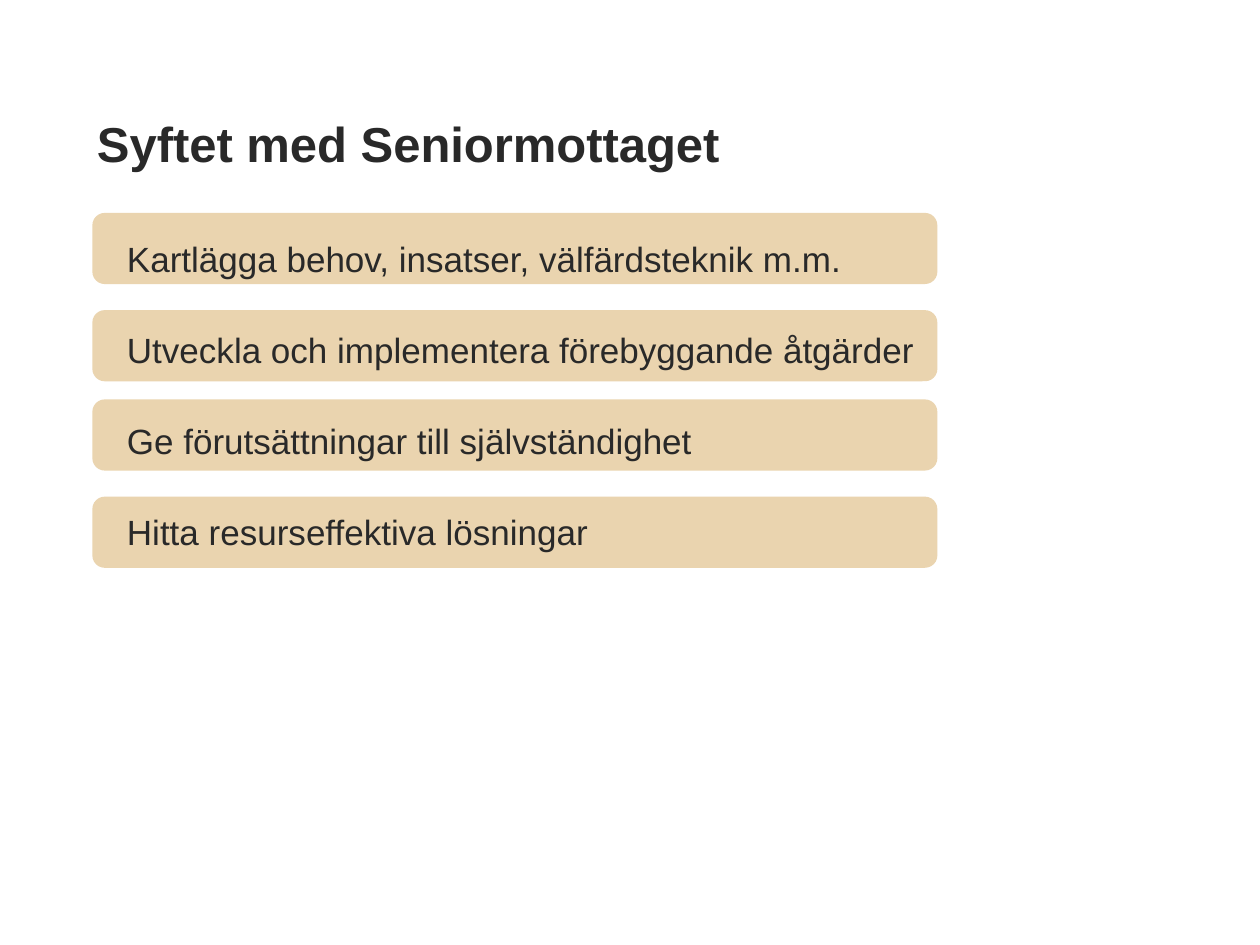
import dataclasses

import pptx
import pptx.dml.color
import pptx.enum.shapes
import pptx.enum.text
import pptx.util
from pptx.util import Cm


@dataclasses.dataclass(frozen=True)
class Theme:
    font: str = "Arial"
    ink: str = "292929"
    sand: str = "EAD4AF"
    title_size: int = 28
    body_size: int = 20


@dataclasses.dataclass(frozen=True)
class Purpose:
    text: str
    bar_top: float


THEME = Theme()
PURPOSES = [
    Purpose("Kartlägga behov, insatser, välfärdsteknik m.m.", 4.31),
    Purpose("Utveckla och implementera förebyggande åtgärder", 6.27),
    Purpose("Ge förutsättningar till självständighet", 8.07),
    Purpose("Hitta resurseffektiva lösningar", 10.03),
]


def color(value: str) -> pptx.dml.color.RGBColor:
    return pptx.dml.color.RGBColor.from_string(value)


def write(paragraph, text: str, *, size: int, bold: bool = False,
          line_spacing: float = 1.0, space_before: float = 0) -> None:
    paragraph.alignment = pptx.enum.text.PP_ALIGN.LEFT
    paragraph.line_spacing = line_spacing
    paragraph.space_before = pptx.util.Pt(space_before)
    run = paragraph.add_run()
    run.text = text
    run.font.name = THEME.font
    run.font.size = pptx.util.Pt(size)
    run.font.bold = bold
    run.font.color.rgb = color(THEME.ink)


def draw_bar(slide, top: float) -> None:
    shape = slide.shapes.add_shape(
        pptx.enum.shapes.MSO_SHAPE.ROUNDED_RECTANGLE,
        Cm(1.88), Cm(top), Cm(17), Cm(1.4))
    shape.shadow.inherit = False
    shape.fill.solid()
    shape.fill.fore_color.rgb = color(THEME.sand)
    shape.line.color.rgb = color(THEME.sand)
    shape.line.width = pptx.util.Pt(1)


def draw_title(slide, text: str) -> None:
    title = slide.shapes.title
    title.left, title.top, title.width, title.height = Cm(1.7), Cm(0.43), Cm(17.98), Cm(3.18)
    frame = title.text_frame
    frame.auto_size = pptx.enum.text.MSO_AUTO_SIZE.NONE
    frame.vertical_anchor = pptx.enum.text.MSO_ANCHOR.BOTTOM
    write(frame.paragraphs[0], text, size=THEME.title_size, bold=True)


def draw_purposes(slide, purposes: list[Purpose]) -> None:
    frame = slide.shapes.add_textbox(Cm(2.31), Cm(3.81), Cm(17.98), Cm(12.07)).text_frame
    frame.word_wrap = True
    for index, purpose in enumerate(purposes):
        paragraph = frame.add_paragraph() if index else frame.paragraphs[0]
        write(paragraph, purpose.text, size=THEME.body_size,
              line_spacing=2, space_before=4 if index else 0)


def main() -> None:
    """Build the slide on the purpose of the senior reception."""
    presentation = pptx.Presentation()
    presentation.slide_width, presentation.slide_height = Cm(25.4), Cm(19.05)
    slide = presentation.slides.add_slide(presentation.slide_layouts[5])
    for purpose in reversed(PURPOSES):
        draw_bar(slide, purpose.bar_top)
    draw_title(slide, "Syftet med Seniormottaget")
    draw_purposes(slide, PURPOSES)
    presentation.save("out.pptx")


if __name__ == "__main__":
    main()
